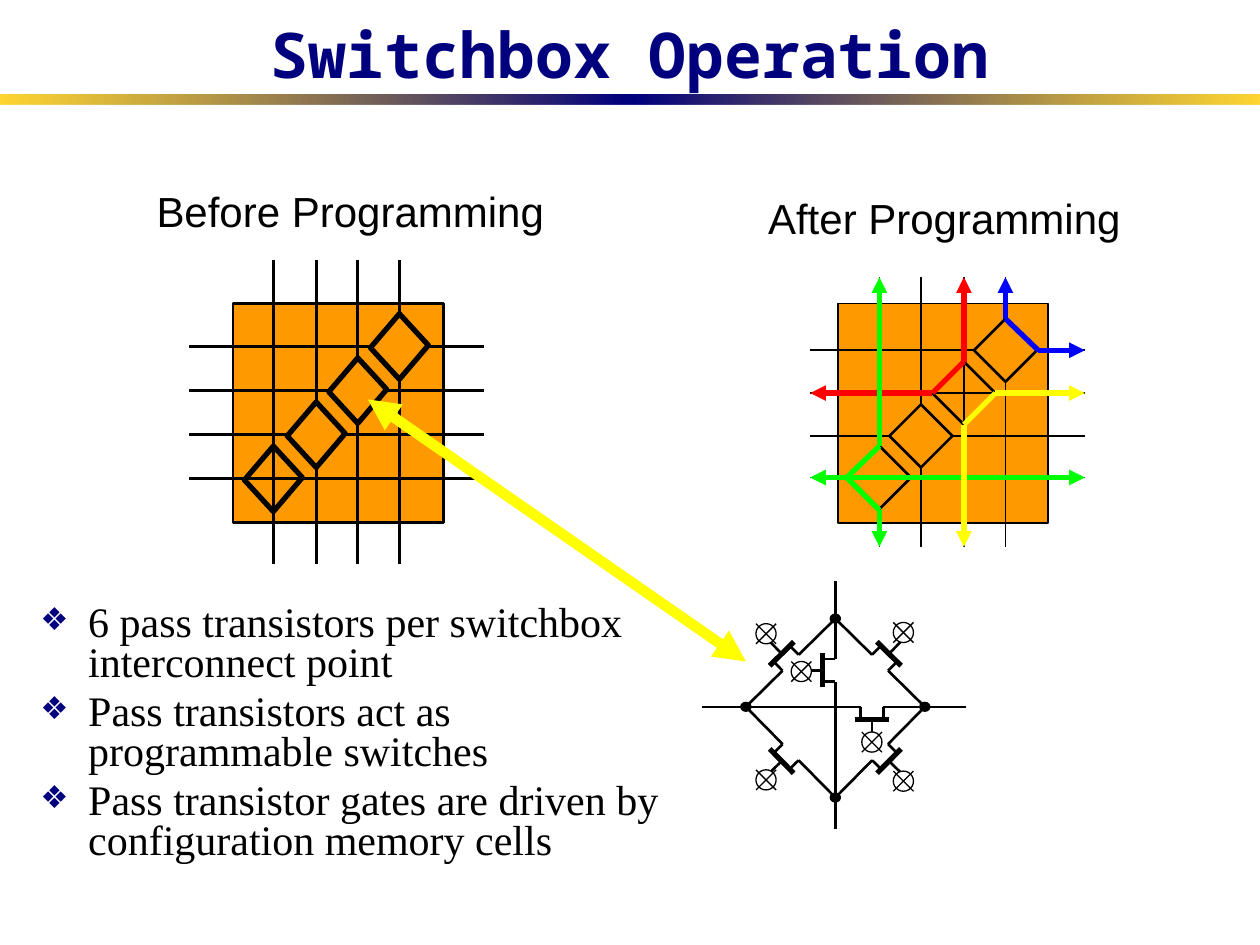
from dataclasses import dataclass
from math import hypot

from lxml.etree import SubElement
from pptx import Presentation
from pptx.dml.color import RGBColor
from pptx.enum.shapes import MSO_CONNECTOR, MSO_SHAPE
from pptx.enum.text import MSO_ANCHOR, MSO_AUTO_SIZE, PP_ALIGN
from pptx.oxml.ns import qn
from pptx.util import Inches, Pt

Point = tuple[float, float]

COLORS = {
    "black": "000000", "white": "FFFFFF", "navy": "00007F", "gold": "FFCC00",
    "orange": "FF9900", "red": "FF0000", "green": "00FF00",
    "yellow": "FFFF00", "blue": "0000FF",
}
TITLE_FONT = {"name": "Noto Sans Mono", "size": Pt(36), "bold": True}
LABEL_FONT = {"name": "Arial", "size": Pt(24)}
BODY_FONT = {"name": "Times New Roman", "size": Pt(24)}
BULLETS = [
    "6 pass transistors per switchbox interconnect point",
    "Pass transistors act as programmable switches",
    "Pass transistor gates are driven by configuration memory cells",
]


@dataclass
class Switchbox:
    box: tuple[float, float, float, float]
    rows: list[float]
    columns: list[float]
    across: Point
    down: Point
    weight: float
    crossed: int  # column whose switch point lies under the wires


@dataclass
class Route:
    color: str
    start: Point
    end: Point
    head: bool = False
    tail: bool = False


@dataclass
class Transistor:
    start: Point
    end: Point
    channel: Point
    cell: Point


BEFORE = Switchbox((1.85, 2.41, 1.67, 1.74), [2.75, 3.1, 3.45, 3.8],
                   [2.17, 2.51, 2.84, 3.17], (1.5, 3.84), (2.06, 4.48), 1.5, 0)
AFTER = Switchbox((6.65, 2.41, 1.67, 1.74), [2.78, 3.12, 3.46, 3.79],
                  [6.98, 7.31, 7.65, 7.98], (6.43, 8.61), (2.2, 4.34), 1, 2)
ROUTES = [
    Route("red", (7.4, 3.12), (6.43, 3.12), tail=True),
    Route("red", (7.65, 2.2), (7.65, 2.87), head=True),
    Route("red", (7.4, 3.12), (7.65, 2.87)),
    Route("green", (6.98, 2.2), (6.98, 3.54), head=True),
    Route("green", (6.98, 4.05), (6.98, 4.34), tail=True),
    Route("green", (6.72, 3.79), (6.98, 4.05)),
    Route("green", (6.72, 3.79), (6.98, 3.54)),
    Route("green", (6.43, 3.79), (8.61, 3.79), head=True, tail=True),
    Route("yellow", (7.9, 3.12), (8.61, 3.12), tail=True),
    Route("yellow", (7.65, 3.37), (7.65, 4.34), tail=True),
    Route("yellow", (7.65, 3.37), (7.9, 3.12)),
    Route("blue", (7.98, 2.2), (7.98, 2.53), head=True),
    Route("blue", (7.98, 2.53), (8.24, 2.78)),
    Route("blue", (8.24, 2.78), (8.61, 2.78), tail=True),
]
NORTH, EAST, SOUTH, WEST = NODES = [(6.63, 4.91), (7.34, 5.61), (6.63, 6.33), (5.92, 5.61)]
OUTER_CELLS = [(7.17, 5.02), (7.17, 6.2), (6.08, 6.19), (6.08, 5.03)]
INNER = [
    Transistor((6.63, 6.58), (6.63, 4.61), (6.63, 5.32), (6.36, 5.33)),
    Transistor((7.67, 5.61), (5.57, 5.61), (6.92, 5.61), (6.92, 5.89)),
]


def color(name: str) -> RGBColor:
    return RGBColor.from_string(COLORS[name])


def apply(target, values: dict) -> None:
    for attribute, value in values.items():
        setattr(target, attribute, value)


def place(shape, left: float, top: float, width: float, height: float) -> None:
    apply(shape, {"left": Inches(left), "top": Inches(top),
                  "width": Inches(width), "height": Inches(height)})


def write(paragraph, text: str, font: dict, ink: str) -> None:
    run = paragraph.add_run()
    run.text = text
    apply(run.font, font)
    run.font.color.rgb = color(ink)


def paint(shape, fill: str, weight: float) -> None:
    shape.shadow.inherit = False
    shape.fill.solid()
    shape.fill.fore_color.rgb = color(fill)
    shape.line.color.rgb = color("black")
    shape.line.width = Pt(weight)


def add_centred(shapes, kind, centre: Point, size: Point, fill: str, weight: float) -> None:
    shape = shapes.add_shape(kind, 0, 0, 0, 0)
    place(shape, centre[0] - size[0] / 2, centre[1] - size[1] / 2, *size)
    paint(shape, fill, weight)


def add_wire(shapes, start: Point, end: Point, weight: float = 1.5, ink: str = "black",
             head: bool = False, tail: bool = False) -> None:
    wire = shapes.add_connector(MSO_CONNECTOR.STRAIGHT, *map(Inches, start + end))
    wire.line.color.rgb = color(ink)
    wire.line.width = Pt(weight)
    properties = wire._element.spPr
    for tag, wanted in (("a:headEnd", head), ("a:tailEnd", tail)):
        if wanted:
            SubElement(properties.find(qn("a:ln")), qn(tag), type="triangle")
    SubElement(properties, qn("a:effectLst"))


def add_switch_point(shapes, centre: Point, programmed: bool) -> None:
    if programmed:
        add_centred(shapes, MSO_SHAPE.DIAMOND, centre, (0.5, 0.5), "orange", 1.5)
        return
    x, y = centre
    corners = [(Inches(x + dx), Inches(y + dy))
               for dx, dy in ((0, -0.26), (0.23, -0.01), (0, 0.26), (-0.23, 0.01))]
    outline = shapes.build_freeform(*corners[0])
    outline.add_line_segments(corners[1:], close=True)
    paint(outline.convert_to_shape(), "orange", 3)


def add_switchbox(shapes, switchbox: Switchbox, programmed: bool) -> None:
    left, top, width, height = switchbox.box
    add_centred(shapes, MSO_SHAPE.RECTANGLE, (left + width / 2, top + height / 2),
                (width, height), "orange", switchbox.weight)
    points = list(zip(switchbox.columns, reversed(switchbox.rows)))
    add_switch_point(shapes, points.pop(switchbox.crossed), programmed)
    for y in switchbox.rows:
        add_wire(shapes, (switchbox.across[0], y), (switchbox.across[1], y), switchbox.weight)
    for x in switchbox.columns:
        add_wire(shapes, (x, switchbox.down[0]), (x, switchbox.down[1]), switchbox.weight)
    for point in points:
        add_switch_point(shapes, point, programmed)


def add_transistor(shapes, transistor: Transistor) -> None:
    """Draw the wires, legs, gate and memory cell; the gate is left of the direction of travel."""
    (x1, y1), (x2, y2) = transistor.start, transistor.end
    length = hypot(x2 - x1, y2 - y1)
    ux, uy = (x2 - x1) / length, (y2 - y1) / length
    cx, cy = transistor.channel

    def at(along: float, out: float) -> Point:
        return cx + along * ux + out * uy, cy + along * uy - out * ux

    add_wire(shapes, transistor.start, at(-0.09, 0))
    add_wire(shapes, at(0.09, 0), transistor.end)
    for along in (-0.09, 0.09):
        add_wire(shapes, at(along, 0), at(along, 0.1))
    add_wire(shapes, at(-0.135, 0.1), at(0.135, 0.1), 3)
    add_wire(shapes, at(0, 0.1), at(0, 0.23))
    x, y = transistor.cell
    add_centred(shapes, MSO_SHAPE.OVAL, transistor.cell, (0.16, 0.16), "white", 0.75)
    for rise in (0.08, -0.08):
        add_wire(shapes, (x - 0.08, y - rise), (x + 0.08, y + rise), 0.75)


def add_title_bar(shapes) -> None:
    bar = shapes.add_shape(MSO_SHAPE.RECTANGLE, 0, Inches(0.75), Inches(10), Inches(0.08))
    bar.shadow.inherit = False
    bar.line.fill.background()
    bar.fill.gradient()
    bar.fill.gradient_angle = 0
    stops = bar._element.spPr.find(qn("a:gradFill")).find(qn("a:gsLst"))
    stops.clear()
    for position, name, opacity in ((0, "gold", 80), (50, "navy", 100), (100, "gold", 80)):
        stop = SubElement(stops, qn("a:gs"), pos=str(position * 1000))
        tint = SubElement(stop, qn("a:srgbClr"), val=COLORS[name])
        SubElement(tint, qn("a:alpha"), val=str(opacity * 1000))


def add_label(shapes, text: str, left: float, top: float, width: float) -> None:
    label = shapes.add_textbox(*map(Inches, (left, top, width, 0.5)))
    label.text_frame.word_wrap = True
    paragraph = label.text_frame.paragraphs[0]
    paragraph.alignment = PP_ALIGN.CENTER
    write(paragraph, text, LABEL_FONT, "black")


def fill_body(body) -> None:
    place(body, 0.22, 4.75, 5.2, 1.79)
    frame = body.text_frame
    apply(frame, {"auto_size": MSO_AUTO_SIZE.NONE, "vertical_anchor": MSO_ANCHOR.TOP})
    for index, text in enumerate(BULLETS):
        paragraph = frame.add_paragraph() if index else frame.paragraphs[0]
        apply(paragraph, {"line_spacing": 0.8, "space_before": Pt(4.8 if index else 0)})
        properties = paragraph._p.get_or_add_pPr()
        properties.set("marL", str(Inches(0.38)))
        properties.set("indent", str(-Inches(0.38)))
        SubElement(SubElement(properties, qn("a:buClr")), qn("a:srgbClr"), val=COLORS["navy"])
        SubElement(properties, qn("a:buSzPct"), val="75000")
        SubElement(properties, qn("a:buChar"), char="❖")
        write(paragraph, text, BODY_FONT, "black")


def main() -> None:
    deck = Presentation()
    apply(deck, {"slide_width": Inches(10), "slide_height": Inches(7.5)})
    slide = deck.slides.add_slide(deck.slide_layouts[1])
    shapes = slide.shapes
    add_title_bar(shapes)
    place(shapes.title, 0.25, 0, 9.5, 0.77)
    apply(shapes.title.text_frame, {"auto_size": MSO_AUTO_SIZE.NONE,
                                    "vertical_anchor": MSO_ANCHOR.BOTTOM})
    heading = shapes.title.text_frame.paragraphs[0]
    heading.alignment = PP_ALIGN.CENTER
    write(heading, "Switchbox Operation", TITLE_FONT, "navy")
    fill_body(slide.placeholders[1])
    add_label(shapes, "After Programming", 5.96, 1.48, 3.07)
    add_label(shapes, "Before Programming", 1.06, 1.42, 3.44)
    add_switchbox(shapes.add_group_shape().shapes, BEFORE, programmed=False)
    programmed_box = shapes.add_group_shape().shapes
    add_switchbox(programmed_box, AFTER, programmed=True)
    for route in ROUTES:
        add_wire(programmed_box, route.start, route.end, 3, route.color, route.head, route.tail)
    add_wire(shapes, (2.92, 3.17), WEST[:1] + (5.25,), 6, "yellow", head=True, tail=True)

    circuit = shapes.add_group_shape().shapes
    for node, following, cell in zip(NODES, NODES[1:] + NODES[:1], OUTER_CELLS):
        middle = ((node[0] + following[0]) / 2, (node[1] + following[1]) / 2)
        add_transistor(circuit, Transistor(node, following, middle, cell))
        add_centred(circuit, MSO_SHAPE.OVAL, node, (0.07, 0.06), "black", 1.5)
    for transistor in INNER:
        add_transistor(circuit, transistor)
    deck.save("out.pptx")


if __name__ == "__main__":
    main()
